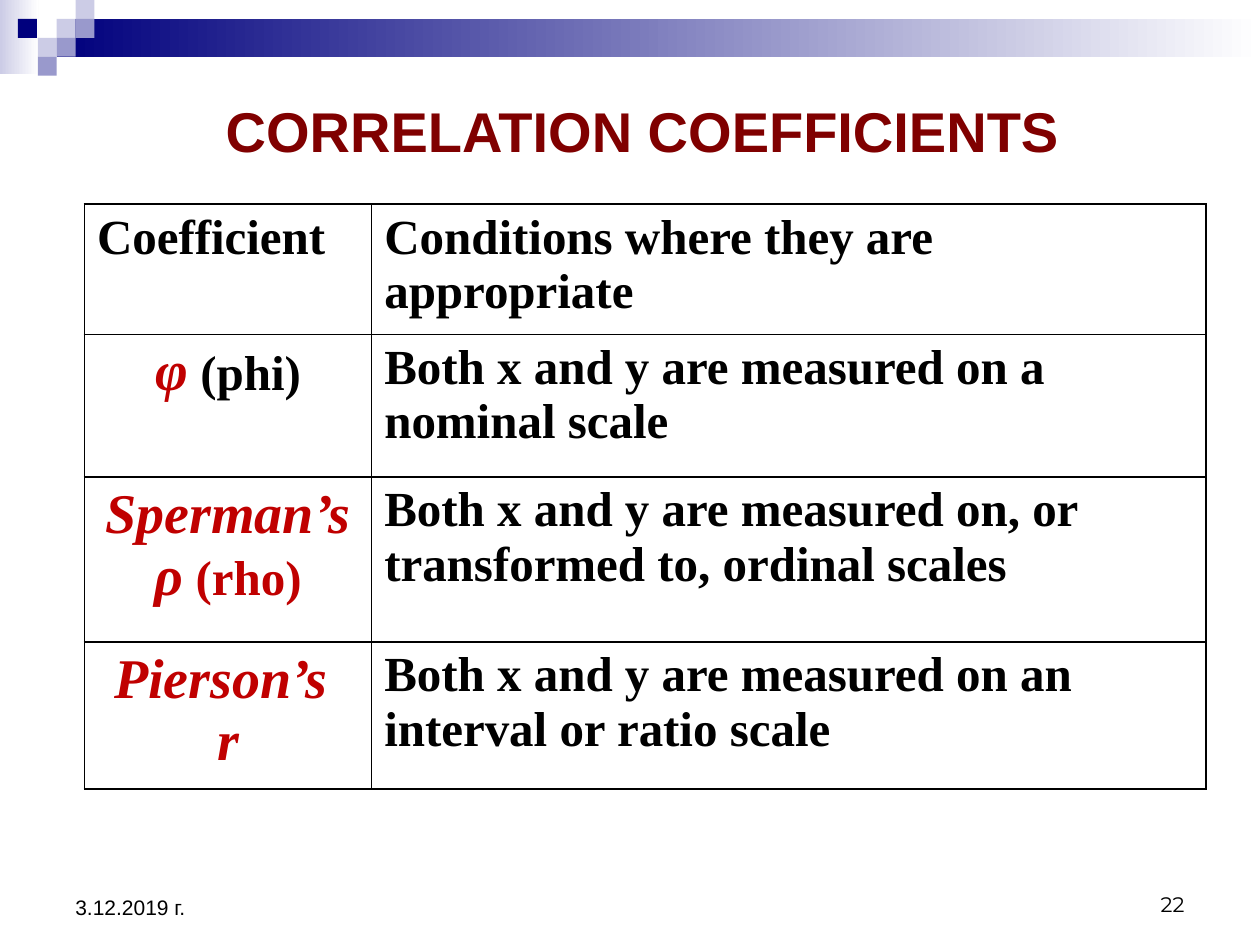
from typing import NamedTuple

from lxml.etree import SubElement
from pptx import Presentation
from pptx.dml.color import RGBColor
from pptx.enum.shapes import MSO_SHAPE
from pptx.enum.text import MSO_ANCHOR, PP_ALIGN
from pptx.oxml.ns import qn
from pptx.util import Inches, Pt

COLORS = {
    "navy": "00007D",
    "violet": "9999CC",
    "lavender": "CCCCE6",
    "white": "FFFFFF",
    "maroon": "800000",
    "red": "C00000",
    "black": "000000",
}
WIDTH, HEIGHT = 10, 7.5
UNIT = 0.15  # side of one square of the corner mosaic, in inches
COLUMN_WIDTHS = [2.28, 6.62]
ROW_HEIGHTS = [0.96, 1.13, 1.31, 1.13]


class Span(NamedTuple):
    text: str
    size: float = 28
    color: str = "black"
    font: str = "Times New Roman"
    bold: bool = True
    italic: bool = False


class Block(NamedTuple):
    """A rectangle in mosaic units; a second colour makes a gradient."""
    column: float
    row: float
    columns: float
    rows: float
    color: str
    end_color: str = ""


class Label(NamedTuple):
    """A text box placed by shares of the slide's size."""
    left: float
    top: float
    width: float
    height: float
    span: Span
    align: PP_ALIGN
    anchor: MSO_ANCHOR


def symbol(text: str) -> Span:
    return Span(text, 32, "red", italic=True)


BLOCKS = [
    Block(0, 0, 2.05, 3.9, "lavender", "white"),
    Block(3, 1, WIDTH / UNIT - 3, 2, "navy", "white"),
    Block(3, 1, 1, 1, "lavender"),
    Block(4, 0, 1, 1, "lavender"),
    Block(4, 1, 1, 1, "violet"),
    Block(2, 2, 1, 1, "lavender"),
    Block(0.95, 1, 1, 1, "navy"),
    Block(3, 2, 1, 1, "violet"),
    Block(2, 3, 1, 1, "violet"),
]

LABELS = [
    Label(0.146, 0.08, 0.728, 0.116,
          Span("CORRELATION COEFFICIENTS", 32, "maroon", "Arial"),
          PP_ALIGN.CENTER, MSO_ANCHOR.MIDDLE),
    Label(0.05, 0.91, 0.233, 0.07,
          Span("3.12.2019 г.", 12, font="Arial", bold=False),
          PP_ALIGN.LEFT, MSO_ANCHOR.BOTTOM),
    Label(0.717, 0.91, 0.233, 0.067,
          Span("22", 12, font="Montserrat", bold=False),
          PP_ALIGN.RIGHT, MSO_ANCHOR.BOTTOM),
]

# Each row: the paragraphs of its first cell, then the condition beside them.
ROWS = [
    ([[Span("Coefficient")]], "Conditions where they are appropriate"),
    ([[symbol("φ"), Span(" (phi)")]],
     "Both x and y are measured on a nominal scale"),
    ([[symbol("Sperman’s ρ"), Span(" "), Span("(rho)", color="red")]],
     "Both x and y are measured on, or transformed to, ordinal scales"),
    ([[symbol("Pierson’s ")], [symbol("r")]],
     "Both x and y are measured on an interval or ratio scale"),
]


def rgb(name: str) -> RGBColor:
    return RGBColor.from_string(COLORS[name])


def write(frame, paragraphs: list[list[Span]], align: PP_ALIGN) -> None:
    for index, spans in enumerate(paragraphs):
        para = frame.add_paragraph() if index else frame.paragraphs[0]
        para.alignment = align
        for span in spans:
            run = para.add_run()
            run.text = span.text
            run.font.name = span.font
            run.font.size = Pt(span.size)
            run.font.bold = span.bold
            run.font.italic = span.italic
            run.font.color.rgb = rgb(span.color)


def draw_block(page, block: Block) -> None:
    place = [Inches(UNIT * units) for units in block[:4]]
    shape = page.shapes.add_shape(MSO_SHAPE.RECTANGLE, *place)
    shape.shadow.inherit = False
    shape.line.fill.background()
    if block.end_color:
        shape.fill.gradient()
        shape.fill.gradient_angle = 0
        ends = (block.color, block.end_color)
        for position, (stop, color) in enumerate(zip(shape.fill.gradient_stops, ends)):
            stop.position = position
            stop.color.rgb = rgb(color)
    else:
        shape.fill.solid()
        shape.fill.fore_color.rgb = rgb(block.color)


def draw_label(page, label: Label) -> None:
    box = page.shapes.add_textbox(
        Inches(WIDTH * label.left), Inches(HEIGHT * label.top),
        Inches(WIDTH * label.width), Inches(HEIGHT * label.height))
    box.text_frame.word_wrap = True
    box.text_frame.vertical_anchor = label.anchor
    write(box.text_frame, [[label.span]], label.align)


def clear_and_border(cell) -> None:
    """Give the cell black one-point borders and no fill."""
    properties = cell._tc.get_or_add_tcPr()
    for side in ("lnL", "lnR", "lnT", "lnB"):
        line = SubElement(properties, qn(f"a:{side}"), w=str(Pt(1)))
        fill = SubElement(line, qn("a:solidFill"))
        SubElement(fill, qn("a:srgbClr"), val=COLORS["black"])
    cell.fill.background()


def draw_table(page) -> None:
    table = page.shapes.add_table(
        len(ROWS), len(COLUMN_WIDTHS), Inches(0.67), Inches(1.62),
        Inches(sum(COLUMN_WIDTHS)), Inches(sum(ROW_HEIGHTS))).table
    table.first_row = table.horz_banding = False
    for column, width in zip(table.columns, COLUMN_WIDTHS):
        column.width = Inches(width)
    for index, (coefficient, condition) in enumerate(ROWS):
        table.rows[index].height = Inches(ROW_HEIGHTS[index])
        name_cell, condition_cell = table.rows[index].cells
        align = PP_ALIGN.CENTER if index else PP_ALIGN.LEFT
        write(name_cell.text_frame, coefficient, align)
        write(condition_cell.text_frame, [[Span(condition)]], PP_ALIGN.LEFT)
        for cell in (name_cell, condition_cell):
            clear_and_border(cell)


def main() -> None:
    deck = Presentation()
    deck.slide_width, deck.slide_height = Inches(WIDTH), Inches(HEIGHT)
    page = deck.slides.add_slide(deck.slide_layouts[6])
    for block in BLOCKS:
        draw_block(page, block)
    for label in LABELS:
        draw_label(page, label)
    draw_table(page)
    deck.save("out.pptx")


if __name__ == "__main__":
    main()
